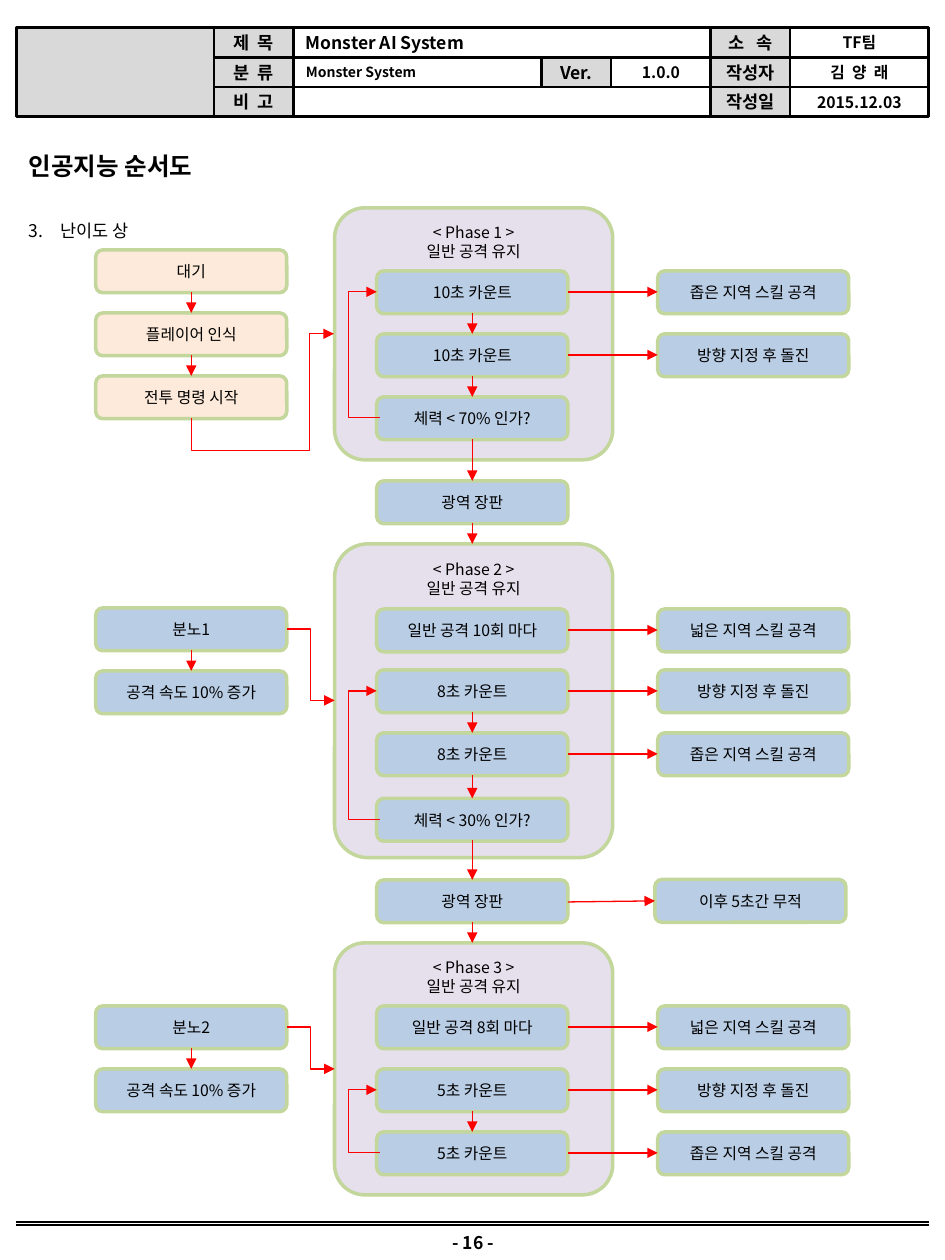
from lxml import etree
from pptx import Presentation
from pptx.dml.color import RGBColor
from pptx.enum.shapes import MSO_CONNECTOR, MSO_SHAPE
from pptx.enum.text import MSO_ANCHOR, PP_ALIGN
from pptx.oxml.ns import qn
from pptx.util import Inches, Pt

RECT, ROUND = MSO_SHAPE.RECTANGLE, MSO_SHAPE.ROUNDED_RECTANGLE
STRAIGHT, ELBOW = MSO_CONNECTOR.STRAIGHT, MSO_CONNECTOR.ELBOW
LEFT, CENTER = PP_ALIGN.LEFT, PP_ALIGN.CENTER
TOP, MIDDLE = MSO_ANCHOR.TOP, MSO_ANCHOR.MIDDLE

FONT = "Noto Sans CJK KR"
BLACK, GRAY, RED = "000000", "D9D9D9", "FF0000"
BLUE, PEACH, LILAC, GREEN = "B9CDE5", "FDEADA", "E6E0EC", "C3D69B"
PAGE_GRID = (0, 0, 1, 1)
HEADER_GRID = (0.13, 0.22, 1, 0.235)
FLOW_GRID = (0.76, 1.65, 2.23, 1 / 6)
BOX_W, BOX_H, MID = 0.68, 2.04, 0.34


def rgb(value):
    return RGBColor.from_string(value)


class Sheet:
    """Draws styled elements on one slide, placed by columns and rows of the current grid."""

    def __init__(self, slide):
        self.s = slide
        self.grid = PAGE_GRID

    def point(self, col, row):
        x0, y0, dx, dy = self.grid
        return Inches(x0 + col * dx), Inches(y0 + row * dy)

    def area(self, col, row, cols, rows):
        dx, dy = self.grid[2:]
        return *self.point(col, row), Inches(cols * dx), Inches(rows * dy)

    def label(self, sp, text, size, bold=False, align=CENTER, anchor=MIDDLE, spacing=None):
        tf = sp.text_frame
        tf.word_wrap = True
        tf.vertical_anchor = anchor
        tf.text = text
        for p in tf.paragraphs:
            p.alignment = align
            p.line_spacing = spacing
            for r in p.runs:
                r.font.size = Pt(size)
                r.font.bold = bold
                r.font.color.rgb = rgb(BLACK)
                r.font.name = FONT
                etree.SubElement(r._r.get_or_add_rPr(), qn("a:ea"), typeface=FONT)

    def text(self, area, text, size, **style):
        sp = self.s.shapes.add_textbox(*self.area(*area))
        self.label(sp, text, size, **style)
        return sp

    def shape(self, kind, area, fill, line, width):
        sp = self.s.shapes.add_shape(kind, *self.area(*area))
        sp.shadow.inherit = False
        if fill:
            sp.fill.solid()
            sp.fill.fore_color.rgb = rgb(fill)
        else:
            sp.fill.background()
        sp.line.color.rgb = rgb(line)
        sp.line.width = Pt(width)
        return sp

    def cell(self, col, row, cols, text="", size=10, fill=None, rows=1, align=CENTER):
        sp = self.shape(RECT, (col, row, cols, rows), fill, BLACK, 1.5)
        if text:
            self.label(sp, text, size, bold=True, align=align)

    def phase(self, number, row, rows):
        sp = self.shape(ROUND, (0.85, row, 0.99, rows), LILAC, GREEN, 2)
        sp.adjustments[0] = 0.12
        self.label(sp, f"< Phase {number} >\n일반 공격 유지", 9, anchor=TOP)

    def box(self, col, row, text, fill=BLUE):
        sp = self.shape(ROUND, (col, row, BOX_W, BOX_H), fill, GREEN, 2)
        self.label(sp, text, 9)

    def line(self, start, end, color=RED, width=0.75, kind=STRAIGHT, arrow=True):
        c = self.s.shapes.add_connector(kind, *self.point(*start), *self.point(*end))
        c.line.color.rgb = rgb(color)
        c.line.width = Pt(width)
        spPr = c._element.spPr
        if arrow:
            etree.SubElement(spPr.find(qn("a:ln")), qn("a:tailEnd"), type="triangle")
        etree.SubElement(spPr, qn("a:effectLst"))
        return c

    def elbow(self, start, end, bends, turn=0):
        c = self.line(start, end, kind=ELBOW)
        spPr = c._element.spPr
        if turn:
            spPr.find(qn("a:xfrm")).set("rot", str(turn * 60000))
        geom = spPr.find(qn("a:prstGeom"))
        geom.set("prst", f"bentConnector{len(bends) + 2}")
        guides = geom.find(qn("a:avLst"))
        for i, bend in enumerate(bends, 1):
            etree.SubElement(guides, qn("a:gd"), name=f"adj{i}", fmla=f"val {round(bend * 100000)}")

    def down(self, col, start, end):
        self.line((col + MID, start), (col + MID, end))

    def across(self, row):
        self.line((1 + BOX_W, row + 1), (2, row + 1))

    def loop(self, bottom, top):
        x0, x1, via = 1.01, 1, 0.9
        self.elbow((x0, bottom + 1), (x1, top + 1), [(x0 - via) / (x0 - x1)])


def draw_header(sheet):
    sheet.grid = HEADER_GRID
    sheet.cell(0, 0, 1.57, fill=GRAY, rows=3)
    labels = [("제  목", "소   속", "TF팀"), ("분  류", "작성자", "김  양  래"),
              ("비  고", "작성일", "2015.12.03")]
    for row, (left, right, value) in enumerate(labels):
        sheet.cell(6.14, row, 1.1, value, 9)
        sheet.cell(5.51, row, 0.63, right, fill=GRAY)
        sheet.cell(1.57, row, 0.63, left, fill=GRAY)
    sheet.cell(2.2, 0, 3.31, "Monster AI System", align=LEFT)
    sheet.cell(2.2, 2, 3.31)
    sheet.cell(4.72, 1, 0.79, "1.0.0", 9)
    sheet.cell(4.17, 1, 0.55, "Ver.", fill=GRAY)
    sheet.cell(2.2, 1, 1.97, "Monster System", 8, align=LEFT)


def draw_page(sheet):
    sheet.grid = PAGE_GRID
    for y in (9.7, 9.72):
        sheet.line((0.13, y), (7.37, y), BLACK, 1, arrow=False)
    sheet.text((3.36, 9.72, 0.79, 0.28), "- 16 -", 10, bold=True)
    sheet.text((0.13, 1.06, 7.24, 0.39), "인공지능 순서도", 14, bold=True, align=LEFT, spacing=1.5)
    sp = sheet.text((0.13, 1.61, 7.24, 7.95), "난이도 상", 10, align=LEFT, anchor=TOP, spacing=1.5)
    pPr = sp.text_frame.paragraphs[0]._p.get_or_add_pPr()
    pPr.set("marL", str(Inches(0.25)))
    pPr.set("indent", str(Inches(-0.25)))
    etree.SubElement(pPr, qn("a:buFont"), typeface="+mj-lt")
    etree.SubElement(pPr, qn("a:buAutoNum"), type="arabicPeriod", startAt="3")


def draw_flow(sheet):
    sheet.grid = FLOW_GRID
    for number, row, rows in [(1, 0, 12), (2, 16, 14.94), (3, 35, 12)]:
        sheet.phase(number, row, rows)

    for row, text in [(2, "대기"), (5, "플레이어 인식"), (8, "전투 명령 시작")]:
        sheet.box(0, row, text, PEACH)
    for number, row, drop in [(1, 19.05, 3.4), (2, 38, 2)]:
        sheet.box(0, row, f"분노{number}")
        sheet.box(0, row + 3, "공격 속도 10% 증가")
        sheet.down(0, row + 2, row + 3)
        sheet.elbow((BOX_W, row + 1), (0.85, row + 1 + drop), [0.5])

    narrow, wide, dash = "좁은 지역 스킬 공격", "넓은 지역 스킬 공격", "방향 지정 후 돌진"
    steps = [(3, "10초 카운트", narrow), (6, "10초 카운트", dash), (9, "체력 < 70% 인가?", None),
             (13, "광역 장판", None), (19.1, "일반 공격 10회 마다", wide), (22, "8초 카운트", dash),
             (25, "8초 카운트", narrow), (28.12, "체력 < 30% 인가?", None), (32, "광역 장판", None),
             (38, "일반 공격 8회 마다", wide), (41, "5초 카운트", dash), (44, "5초 카운트", narrow)]
    for row, text, skill in steps:
        sheet.box(1, row, text)
        if skill:
            sheet.box(2, row, skill)
            sheet.across(row)
    sheet.box(1.99, 31.98, "이후 5초간 무적")
    sheet.line((1 + BOX_W, 33.05), (1.99, 33))

    for row in (4, 7):
        sheet.down(0, row, row + 1)
    for start, end in [(5, 6), (8, 9), (11, 13), (15, 16), (24, 25), (27, 28.12),
                       (30.12, 32), (34, 35), (43, 44)]:
        sheet.down(1, start, end)
    for bottom, top in [(9, 3), (28.12, 22), (44, 41)]:
        sheet.loop(bottom, top)

    sheet.grid = PAGE_GRID
    sheet.elbow((2.42, 3.55), (1.75, 2.42), [-0.38, 0.83], turn=90)


def main():
    prs = Presentation()
    prs.slide_width, prs.slide_height = Inches(7.5), Inches(10)
    sheet = Sheet(prs.slides.add_slide(prs.slide_layouts[6]))
    draw_header(sheet)
    draw_page(sheet)
    draw_flow(sheet)
    prs.save("out.pptx")


if __name__ == "__main__":
    main()
